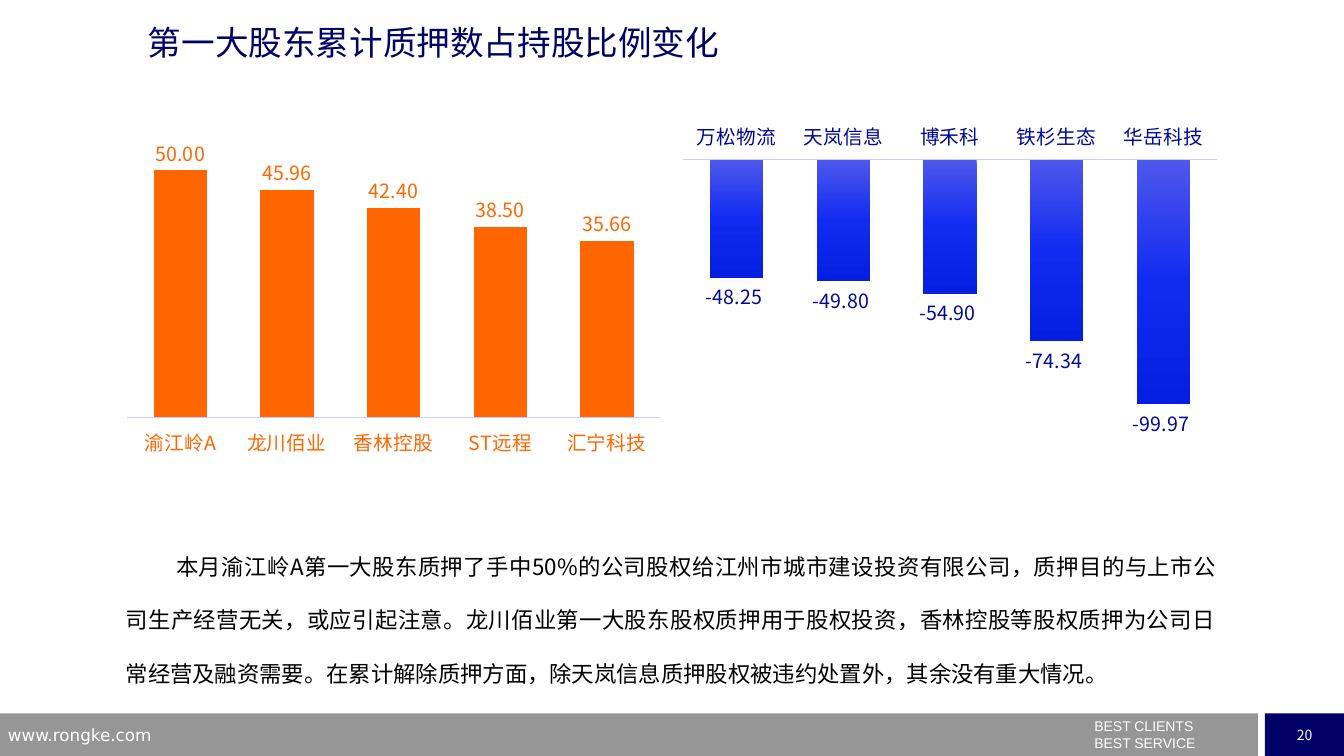
from copy import deepcopy

from lxml import etree
from pptx import Presentation
from pptx import util as u
from pptx.chart.data import CategoryChartData
from pptx.dml.color import RGBColor
from pptx.enum import chart as ch, shapes, text
from pptx.oxml import parse_xml
from pptx.oxml.ns import nsdecls, qn

COLORS = {"navy": "000066", "grey": "969696", "white": "FFFFFF", "black": "000000",
          "orange": "FF6600", "blue": "000798", "axis": "C9CCFF"}
BLUE_STOPS = [(0, "4E57EC"), (0.5, "112BF1"), (1, "041EE2")]
CJK = "Noto Sans CJK SC"

deck = Presentation()
deck.slide_width, deck.slide_height = u.Cm(33.87), u.Cm(19.05)
page = deck.slides.add_slide(deck.slide_layouts[6])


def write(box, lines, size, color, font=CJK, align=text.PP_ALIGN.LEFT,
          anchor=text.MSO_ANCHOR.TOP, spacing=1, indent=0):
    frame = box.text_frame
    frame.word_wrap = True
    frame.vertical_anchor = anchor
    for number, line in enumerate(lines.split("\n")):
        para = frame.add_paragraph() if number else frame.paragraphs[0]
        para.alignment, para.line_spacing = align, spacing
        if indent:
            properties = para._p.get_or_add_pPr()
            properties.set("marL", "0")
            properties.set("indent", str(u.Cm(indent)))
        span = para.add_run()
        span.text = line
        span.font.size, span.font.name = u.Pt(size), font
        span.font.color.rgb = RGBColor.from_string(COLORS[color])


def format_font(font, color):
    font.size, font.name = u.Pt(14), CJK
    font.color.rgb = RGBColor.from_string(COLORS[color])


# Footer bars
bars = []
for left, width, color in [(0, 31.7, "grey"), (31.88, 2, "navy")]:
    bar = page.shapes.add_shape(shapes.MSO_SHAPE.RECTANGLE,
                                u.Cm(left), u.Cm(17.98), u.Cm(width), u.Cm(1.07))
    bar.shadow.inherit = False
    bar.fill.solid()
    bar.fill.fore_color.rgb = RGBColor.from_string(COLORS[color])
    bar.line.fill.background()
    bars.append(bar)
write(bars[1], "20", 10, "white", align=text.PP_ALIGN.CENTER, anchor=text.MSO_ANCHOR.MIDDLE)

# Footer texts, title and commentary
commentary = (
    "本月渝江岭A第一大股东质押了手中50%的公司股权给江州市城市建设投资有限公司，"
    "质押目的与上市公司生产经营无关，或应引起注意。"
    "龙川佰业第一大股东股权质押用于股权投资，香林控股等股权质押为公司日常经营及融资需要。"
    "在累计解除质押方面，除天岚信息质押股权被违约处置外，其余没有重大情况。")
for left, top, width, height, words, style in [
    (27.33, 17.96, 6.5, 0.92, "BEST CLIENTS\nBEST SERVICE",
     dict(size=10, color="white", font="Arial")),
    (-0.05, 18.14, 8.18, 0.66, "www.rongke.com",
     dict(size=12, color="white", font="DejaVu Sans")),
    (3.48, 0.43, 22.86, 3.18, "第一大股东累计质押数占持股比例变化",
     dict(size=24, color="navy")),
    (2.92, 13.13, 27.99, 4.17, commentary,
     dict(size=16, color="black", align=text.PP_ALIGN.JUSTIFY, spacing=2, indent=1.27)),
]:
    box = page.shapes.add_textbox(u.Cm(left), u.Cm(top), u.Cm(width), u.Cm(height))
    write(box, words, **style)

# Charts: pledged shares on the left, released shares on the right
charts = [
    dict(left=2.92, top=2.87, color="orange", format="0.00", low=0, high=60,
         plot_top=0.02, plot_height=0.86, labels=ch.XL_TICK_LABEL_POSITION.LOW,
         values={"渝江岭A": 50, "龙川佰业": 45.96, "香林控股": 42.4,
                 "ST远程": 38.5, "汇宁科技": 35.66}),
    dict(left=16.94, top=2.9, color="blue", format="#,##0.00_ ", low=-120, high=0,
         plot_top=0.13, plot_height=0.85, labels=ch.XL_TICK_LABEL_POSITION.HIGH,
         values={"万松物流": -48.25, "天岚信息": -49.8, "博禾科": -54.9,
                 "铁杉生态": -74.34, "华岳科技": -99.97}),
]
for part in charts:
    data = CategoryChartData(number_format=part["format"])
    data.categories = list(part["values"])
    data.add_series("Series 1", list(part["values"].values()))
    chart = page.shapes.add_chart(ch.XL_CHART_TYPE.COLUMN_CLUSTERED, u.Cm(part["left"]),
                                  u.Cm(part["top"]), u.Cm(14), u.Cm(8.69), data).chart
    chart.has_legend = chart.has_title = False
    format_font(chart.font, "black")

    # Axes
    values, names = chart.value_axis, chart.category_axis
    values.visible = values.has_major_gridlines = False
    values.minimum_scale, values.maximum_scale = part["low"], part["high"]
    names.major_tick_mark = ch.XL_TICK_MARK.NONE
    names.tick_label_position = part["labels"]
    names.format.line.color.rgb = RGBColor.from_string(COLORS["axis"])
    names.format.line.width = u.Pt(0.75)
    format_font(names.tick_labels.font, part["color"])

    # Columns and their labels
    plot = chart.plots[0]
    plot.gap_width, plot.overlap, plot.vary_by_categories = 100, -24, False
    series = plot.series[0]
    series.invert_if_negative = False
    fill = series.format.fill
    if part["color"] == "blue":
        fill.gradient()
        fill.gradient_angle = 270
        stop_list = next(series._element.iter(qn("a:gsLst")))
        stop_list.append(deepcopy(stop_list[0]))
        for stop, (position, shade) in zip(fill.gradient_stops, BLUE_STOPS):
            stop.position = position
            stop.color.rgb = RGBColor.from_string(shade)
    else:
        fill.solid()
        fill.fore_color.rgb = RGBColor.from_string(COLORS[part["color"]])
    plot.has_data_labels = True
    labels = plot.data_labels
    labels.show_value = True
    labels.number_format, labels.number_format_is_linked = part["format"], False
    labels.position = ch.XL_LABEL_POSITION.OUTSIDE_END
    format_font(labels.font, part["color"])

    # Plot area position
    area = next(chart._chartSpace.iter(qn("c:plotArea")))
    for layout in area.findall(qn("c:layout")):
        area.remove(layout)
    area.insert(0, parse_xml(
        f'<c:layout {nsdecls("c")}><c:manualLayout><c:layoutTarget val="inner"/>'
        '<c:xMode val="edge"/><c:yMode val="edge"/><c:x val="0.02"/>'
        f'<c:y val="{part["plot_top"]}"/><c:w val="0.96"/>'
        f'<c:h val="{part["plot_height"]}"/></c:manualLayout></c:layout>'))

# East Asian typeface beside each Latin one
roots = [shape.chart._chartSpace if shape.has_chart else shape._element for shape in page.shapes]
for root in roots:
    for latin in list(root.iter(qn("a:latin"))):
        east = etree.Element(qn("a:ea"), typeface=latin.get("typeface"))
        latin.addnext(east)

deck.save("out.pptx")
